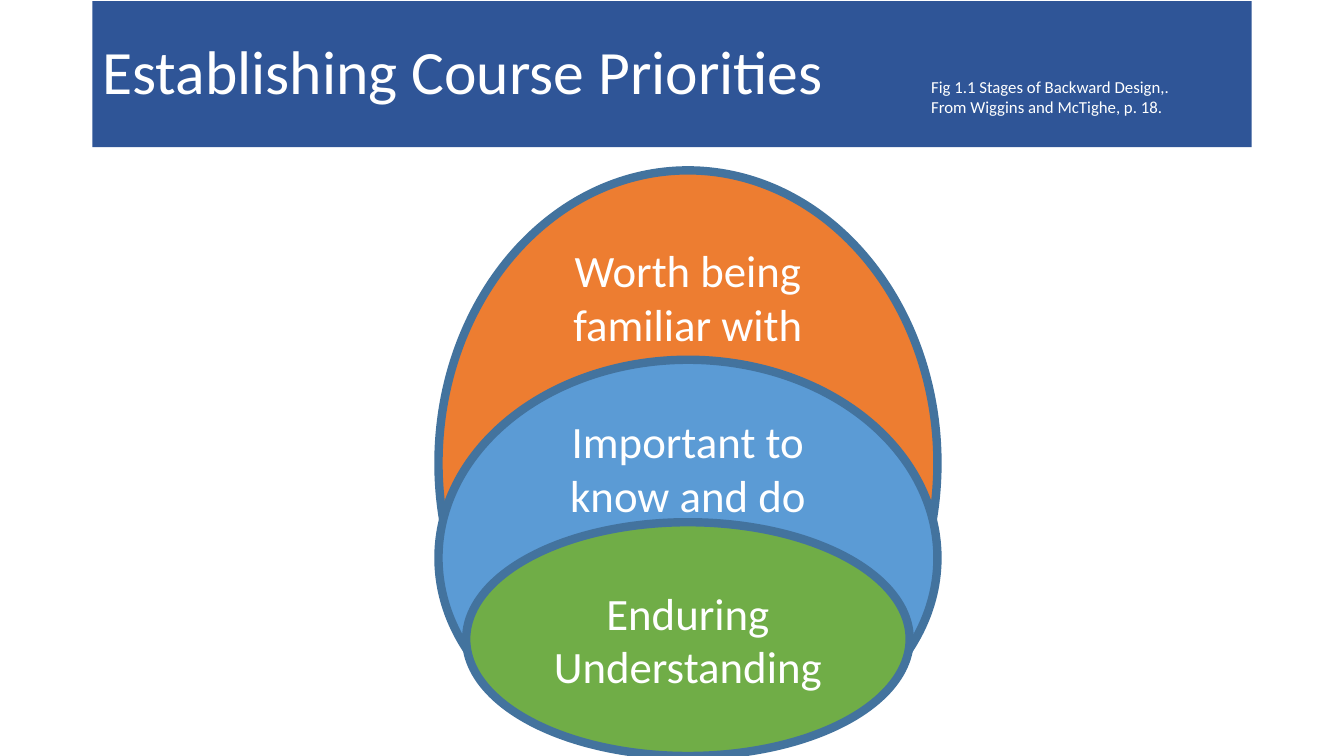
import pptx
import pptx.dml.color
import pptx.enum.shapes
import pptx.enum.text
import pptx.util

Pt = pptx.util.Pt
ALIGN = pptx.enum.text.PP_ALIGN
ANCHOR = pptx.enum.text.MSO_ANCHOR
AUTO_SIZE = pptx.enum.text.MSO_AUTO_SIZE

FONT = "Calibri"
WHITE = "FFFFFF"
BANNER_BLUE = "2F5597"
OUTLINE_BLUE = "43739E"
SLIDE_WIDTH, SLIDE_HEIGHT = 960, 540
OVAL_CENTER = 491.4

# Ovals from back to front: text, fill, top, width, space kept free below the text
PRIORITIES = [
    ("Worth being familiar with", "ED7D31", 121.7, 356.4, 242),
    ("Important to know and do", "5B9BD5", 257, 356.4, 133),
    ("Enduring Understanding", "70AD47", 373, 316.8, 3.6),
]


def color(hex_string):
    return pptx.dml.color.RGBColor.from_string(hex_string)


def fill_shape(shape, hex_string):
    shape.fill.solid()
    shape.fill.fore_color.rgb = color(hex_string)


def write_text(shape, text, size=18, align=ALIGN.LEFT, anchor=ANCHOR.TOP,
               auto_size=AUTO_SIZE.NONE, line_spacing=1.0, bottom=3.6):
    frame = shape.text_frame
    frame.word_wrap = True
    frame.auto_size = auto_size
    frame.vertical_anchor = anchor
    frame.margin_bottom = Pt(bottom)
    frame.text = text
    for paragraph in frame.paragraphs:
        paragraph.alignment = align
        paragraph.line_spacing = line_spacing
        for run in paragraph.runs:
            run.font.name = FONT
            run.font.size = Pt(size)
            run.font.color.rgb = color(WHITE)


def add_banner_title(slide, text):
    title = slide.shapes.title
    title.left, title.top = Pt(66), Pt(0.75)
    title.width, title.height = Pt(828), Pt(104.4)
    fill_shape(title, BANNER_BLUE)
    write_text(title, text, size=44, anchor=ANCHOR.MIDDLE, line_spacing=0.9)


def add_caption(slide, text):
    caption = slide.shapes.add_textbox(Pt(658), Pt(51), Pt(208), Pt(36))
    write_text(caption, text, size=12, auto_size=AUTO_SIZE.SHAPE_TO_FIT_TEXT)


def add_priority_oval(slide, text, fill, top, width, space_below):
    """Every oval shares one centre line and rests on the slide's bottom edge."""
    oval = slide.shapes.add_shape(
        pptx.enum.shapes.MSO_SHAPE.OVAL,
        Pt(OVAL_CENTER - width / 2), Pt(top), Pt(width), Pt(SLIDE_HEIGHT - top))
    oval.shadow.inherit = False
    fill_shape(oval, fill)
    oval.line.color.rgb = color(OUTLINE_BLUE)
    oval.line.width = Pt(6)
    write_text(oval, text, size=32, align=ALIGN.CENTER,
               anchor=ANCHOR.MIDDLE, bottom=space_below)


def main():
    presentation = pptx.Presentation()
    presentation.slide_width = Pt(SLIDE_WIDTH)
    presentation.slide_height = Pt(SLIDE_HEIGHT)
    title_only = presentation.slide_layouts.get_by_name("Title Only")
    slide = presentation.slides.add_slide(title_only)

    # Banner with its source note
    add_banner_title(slide, "Establishing Course Priorities")
    add_caption(slide, "Fig 1.1 Stages of Backward Design,.\n"
                       "From Wiggins and McTighe, p. 18.")

    # Nested ovals
    for priority in PRIORITIES:
        add_priority_oval(slide, *priority)

    presentation.save("out.pptx")


if __name__ == "__main__":
    main()
